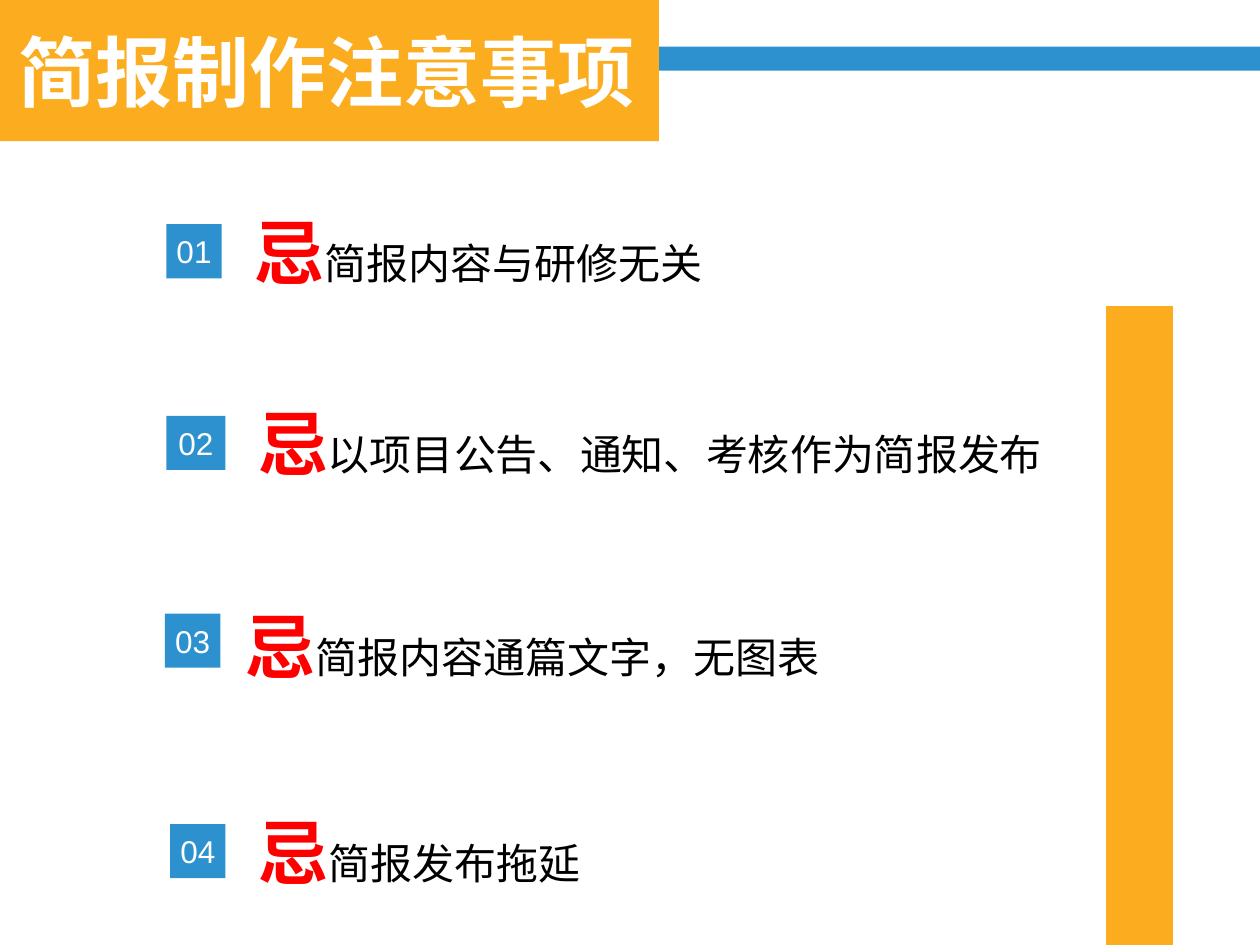
from dataclasses import dataclass

import lxml.etree
import pptx
import pptx.dml.color
import pptx.enum.shapes
import pptx.enum.text
import pptx.oxml.ns
import pptx.util

Inches = pptx.util.Inches
CJK, LATIN = "Noto Sans CJK SC", "Arial"
COLORS = {
    "orange": "FCAC1F",
    "blue": "2C91CE",
    "red": "FF0000",
    "black": "000000",
    "white": "FFFFFF",
}


@dataclass
class Taboo:
    number: str
    text: str
    badge_left: float
    badge_top: float
    text_left: float
    text_top: float
    badge_width: float = 0.44
    text_width: float = 4.89


TABOOS = [
    Taboo("01", "简报内容与研修无关", 1.32, 1.78, 1.92, 1.74),
    Taboo("02", "以项目公告、通知、考核作为简报发布", 1.32, 3.3, 1.95, 3.26, 0.47, 6.63),
    Taboo("03", "简报内容通篇文字，无图表", 1.31, 4.87, 1.85, 4.87),
    Taboo("04", "简报发布拖延", 1.35, 6.54, 1.95, 6.5),
]


def rgb(color: str) -> pptx.dml.color.RGBColor:
    return pptx.dml.color.RGBColor.from_string(COLORS[color])


def set_font(font, name: str, size: float, color: str, bold: bool = False) -> None:
    font.name, font.size, font.bold = name, pptx.util.Pt(size), bold
    font.color.rgb = rgb(color)
    # East Asian typeface follows the Latin one
    ea = lxml.etree.SubElement(font._rPr, pptx.oxml.ns.qn("a:ea"))
    ea.set("typeface", name)


def add_block(shapes, left: float, top: float, width: float, height: float, color: str):
    sp = shapes.add_shape(
        pptx.enum.shapes.MSO_SHAPE.RECTANGLE,
        Inches(left), Inches(top), Inches(width), Inches(height),
    )
    sp.shadow.inherit = False
    sp.fill.solid()
    sp.fill.fore_color.rgb = rgb(color)
    sp.line.fill.background()
    return sp


def add_label(sp, text: str, name: str, size: float, bold: bool = False) -> None:
    tf = sp.text_frame
    tf.vertical_anchor = pptx.enum.text.MSO_ANCHOR.MIDDLE
    p = tf.paragraphs[0]
    p.text = text
    p.alignment = pptx.enum.text.PP_ALIGN.CENTER
    set_font(p.font, name, size, "white", bold)


def add_taboo(shapes, item: Taboo) -> None:
    group = shapes.add_group_shape()

    # Warning text
    box = group.shapes.add_textbox(
        Inches(item.text_left), Inches(item.text_top), Inches(item.text_width), Inches(0.51)
    )
    tf = box.text_frame
    tf.word_wrap = True
    tf.vertical_anchor = pptx.enum.text.MSO_ANCHOR.MIDDLE
    p = tf.paragraphs[0]
    for text, size, color, bold in (("忌", 40, "red", True), (item.text, 24, "black", False)):
        r = p.add_run()
        r.text = text
        set_font(r.font, CJK, size, color, bold)

    # Number badge
    badge = add_block(
        group.shapes, item.badge_left, item.badge_top, item.badge_width, 0.43, "blue"
    )
    tf = badge.text_frame
    tf.margin_left = tf.margin_right = tf.margin_top = tf.margin_bottom = 0
    add_label(badge, item.number, LATIN, 18)


def main() -> None:
    prs = pptx.Presentation()
    prs.slide_width, prs.slide_height = Inches(10), Inches(7.5)
    s = prs.slides.add_slide(prs.slide_layouts[6])

    # Side bar, header stripe and title
    add_block(s.shapes, 8.78, 2.43, 0.53, 5.09, "orange")
    add_block(s.shapes, 5.23, 0.37, 4.77, 0.19, "blue")
    title = add_block(s.shapes, -0.04, 0, 5.27, 1.12, "orange")
    add_label(title, "简报制作注意事项", CJK, 44, True)

    # Numbered taboos
    for item in TABOOS:
        add_taboo(s.shapes, item)

    prs.save("out.pptx")


if __name__ == "__main__":
    main()
